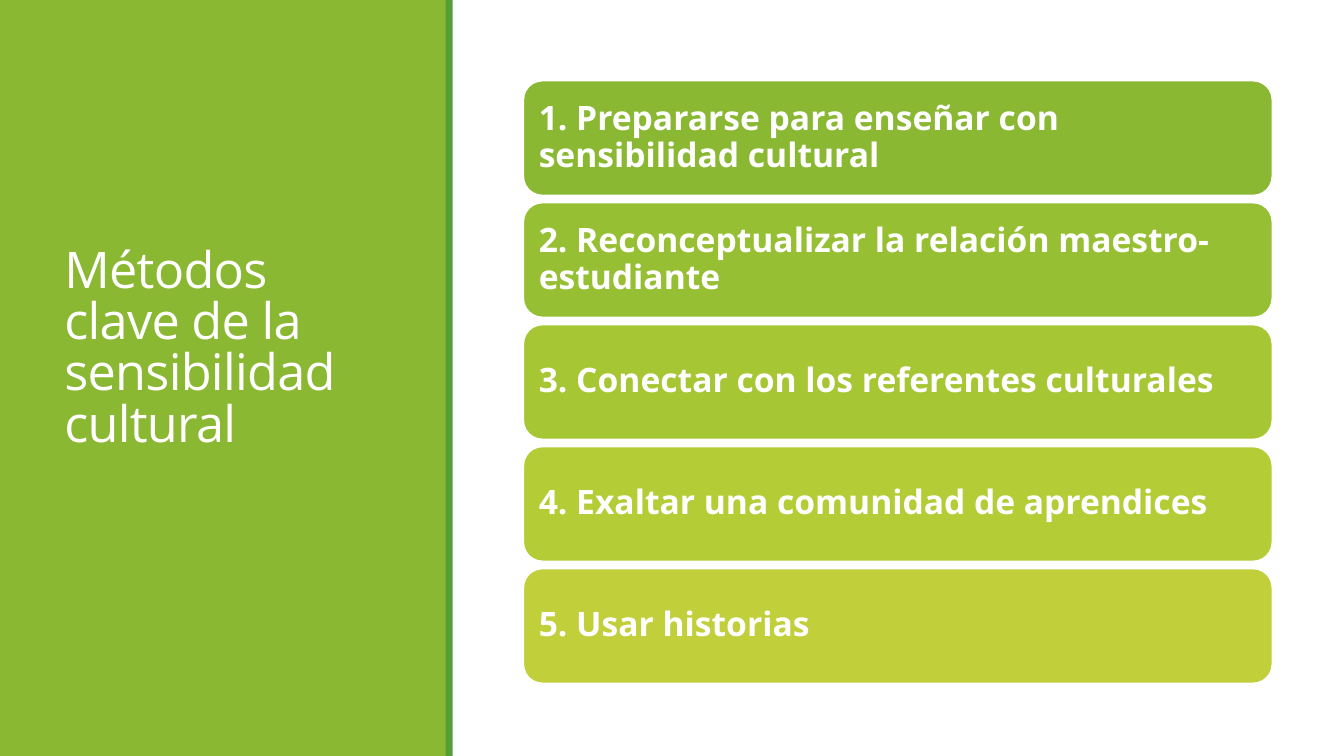
from dataclasses import dataclass

from pptx import Presentation
from pptx.dml.color import RGBColor
from pptx.enum.shapes import MSO_SHAPE as Shape
from pptx.enum.text import MSO_ANCHOR as Anchor, PP_ALIGN as Align
from pptx.util import Inches, Pt


@dataclass(frozen=True)
class Theme:
    font: str = "Open Sans"
    white: str = "FFFFFF"
    panel: str = "8AB833"
    stripe: str = "549E39"
    cards: tuple = ("8AB833", "97BF33", "A6C634", "B4CC35", "C0CF3A")
    title_size: int = 36
    card_size: int = 24
    card_border: float = 1.25


TITLE = "Métodos clave de la sensibilidad cultural"
METHODS = (
    "1. Prepararse para enseñar con sensibilidad cultural",
    "2. Reconceptualizar la relación maestro-estudiante",
    "3. Conectar con los referentes culturales",
    "4. Exaltar una comunidad de aprendices",
    "5. Usar historias",
)
CARD_LEFT, CARD_TOP, CARD_WIDTH, CARD_HEIGHT = 5.19, 0.8, 7.43, 1.14
CARD_STEP = 1.21


def write(frame, text, *, font, size, color, bold=False, line_spacing=1.0,
          tracking=0, inset=0.1, bottom=0.1):
    """Fill a frame with one left-aligned paragraph; tracking is in points."""
    frame.word_wrap = True
    frame.vertical_anchor = Anchor.MIDDLE
    frame.margin_left = frame.margin_right = frame.margin_top = Inches(inset)
    frame.margin_bottom = Inches(bottom)
    paragraph = frame.paragraphs[0]
    paragraph.alignment = Align.LEFT
    paragraph.line_spacing = line_spacing
    run = paragraph.add_run()
    run.text = text
    run.font.name = font
    run.font.size = Pt(size)
    run.font.bold = bold
    run.font.color.rgb = RGBColor.from_string(color)
    if tracking:
        run.font._element.set("spc", str(int(tracking * 100)))


class SlideBuilder:
    def __init__(self, slide, theme):
        self.slide = slide
        self.theme = theme

    def block(self, left, top, width, height, fill, kind=Shape.RECTANGLE):
        block = self.slide.shapes.add_shape(
            kind, Inches(left), Inches(top), Inches(width), Inches(height))
        block.shadow.inherit = False
        block.fill.solid()
        block.fill.fore_color.rgb = RGBColor.from_string(fill)
        block.line.fill.background()
        return block

    def title(self, text, left, top, width, height):
        box = self.slide.shapes.add_textbox(
            Inches(left), Inches(top), Inches(width), Inches(height))
        # The deeper bottom margin lifts the title by half a line.
        write(box.text_frame, text, font=self.theme.font,
              size=self.theme.title_size, color=self.theme.white,
              line_spacing=0.85, tracking=-0.5, bottom=0.61)

    def card(self, text, top, fill):
        card = self.block(CARD_LEFT, top, CARD_WIDTH, CARD_HEIGHT, fill,
                          Shape.ROUNDED_RECTANGLE)
        card.line.color.rgb = RGBColor.from_string(self.theme.white)
        card.line.width = Pt(self.theme.card_border)
        write(card.text_frame, text, font=self.theme.font,
              size=self.theme.card_size, color=self.theme.white,
              bold=True, line_spacing=0.9)


def main():
    deck = Presentation()
    deck.slide_width, deck.slide_height = Inches(13.33), Inches(7.5)
    theme = Theme()
    builder = SlideBuilder(deck.slides.add_slide(deck.slide_layouts[6]), theme)

    builder.block(0, 0, 4.43, 7.5, theme.panel)
    builder.title(TITLE, 0.54, 0.57, 3.37, 6.31)
    builder.block(4.42, 0, 0.07, 7.5, theme.stripe)
    for index, (method, fill) in enumerate(zip(METHODS, theme.cards)):
        builder.card(method, CARD_TOP + index * CARD_STEP, fill)

    deck.save("out.pptx")


if __name__ == "__main__":
    main()
